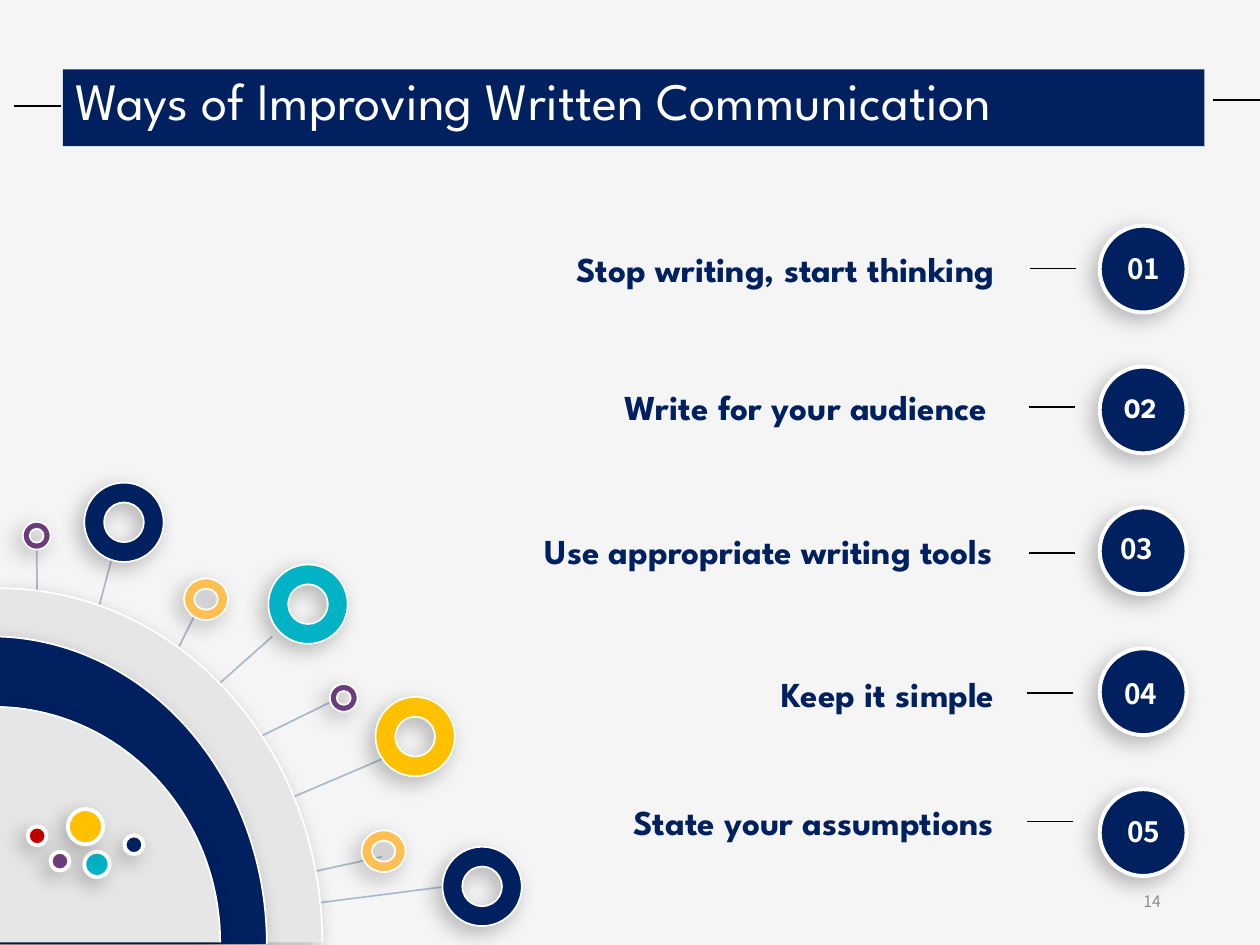
import copy
import math
from dataclasses import dataclass

from lxml import etree
from pptx import Presentation
from pptx import util as u
from pptx.dml.color import RGBColor
from pptx.enum import shapes, text
from pptx.oxml import ns

NAVY, TEAL, GOLD = "002060", "02B3C5", "FFC000"
PURPLE, ORANGE, RED = "6A3C7C", "FFBF53", "C00000"
WHITE, GREY, BLACK = "FFFFFF", "E7E6E6", "000000"
SPOKE, PAGE, PAPER = "ADBACA", "8C8C8C", "F5F5F5"
SPARTAN, NOTO = "League Spartan", "Noto Sans CJK SC"


@dataclass
class Item:
    label: str
    left: float
    top: float
    width: float
    num_left: float
    num_top: float
    dash_right: float
    dash_y: float
    num_font: str = NOTO


@dataclass
class Round:
    left: float
    top: float
    width: float
    height: float
    color: str


ITEMS = [
    Item("Stop writing, start thinking", 9.75, 4.98, 12.17, 22.73, 5.08, 21.69, 5.41),
    Item("Write for your audience", 12.14, 7.77, 8.2, 22.66, 7.87, 21.67, 8.2, SPARTAN),
    Item("Use appropriate writing tools", 10.26, 10.67, 10.49, 22.58, 10.72, 21.67, 11.15),
    Item("Keep it simple", 13.13, 13.56, 9.55, 22.66, 13.64, 21.64, 13.97),
    Item("State your assumptions", 11.91, 16.13, 8.99, 22.73, 16.43, 21.64, 16.56),
]
BADGE_LEFT, BADGE_TOP, BADGE_PITCH, BADGE_SIZE = 22.17, 4.55, 2.84, 1.75

SPOKES = [
    (3.99, 12.27, 0.84, 18.59), (0.74, 10.97, 0.79, 18.59),
    (2.31, 11.05, 0.41, 18.16), (8.92, 17.88, 0.03, 19.02),
    (7.7, 17.27, 0.23, 18.9), (6.63, 14.17, 0.15, 17.35),
    (5.49, 12.83, -0.03, 17.73), (8.08, 15.14, 0.23, 18.49),
]
DOMES = [
    Round(0, 11.86, 6.5, 7.14, GREY),
    Round(-0.18, 12.83, 5.56, 6.2, NAVY),
    Round(-0.13, 14.25, 4.57, 4.75, GREY),
]
RINGS = [
    Round(6.65, 13.79, 0.56, 0.56, PURPLE),
    Round(8.92, 17.07, 1.6, 1.6, NAVY),
    Round(7.57, 14.05, 1.6, 1.6, GOLD),
    Round(7.29, 16.74, 0.89, 0.84, ORANGE),
    Round(5.41, 11.38, 1.6, 1.6, TEAL),
    Round(1.7, 9.73, 1.6, 1.6, NAVY),
    Round(3.71, 11.66, 0.89, 0.84, ORANGE),
    Round(0.46, 10.52, 0.56, 0.56, PURPLE),
]
DOTS = [
    Round(1.7, 17.17, 0.51, 0.51, TEAL),
    Round(0.56, 16.66, 0.38, 0.38, RED),
    Round(1.37, 16.31, 0.71, 0.71, GOLD),
    Round(1.02, 17.17, 0.38, 0.38, PURPLE),
    Round(2.51, 16.84, 0.38, 0.38, NAVY),
]


def rgb(color: str) -> RGBColor:
    return RGBColor.from_string(color)


def paint(sp, color: str, line_pt: float) -> None:
    sp.fill.solid()
    sp.fill.fore_color.rgb = rgb(color)
    sp.line.color.rgb = rgb(WHITE)
    sp.line.width = u.Pt(line_pt)
    sp.shadow.inherit = False
    effects = sp._element.spPr.find(ns.qn("a:effectLst"))
    shadow = etree.SubElement(
        effects, ns.qn("a:outerShdw"), blurRad=str(u.Pt(12)), dist=str(u.Pt(5)),
        dir=str(135 * 60000), algn="tr", rotWithShape="0")
    tint = etree.SubElement(shadow, ns.qn("a:srgbClr"), val=BLACK)
    etree.SubElement(tint, ns.qn("a:alpha"), val="26000")


def add_round(s, kind, item: Round, line_pt: float):
    box = (item.left, item.top, item.width, item.height)
    sp = s.shapes.add_shape(kind, *map(u.Cm, box))
    paint(sp, item.color, line_pt)
    return sp


def add_dome(s, dome: Round, steps: int = 48) -> None:
    bottom = dome.top + dome.height
    angles = [math.pi / 2 * i / steps for i in range(steps + 1)]
    points = [(u.Cm(dome.left + dome.width * math.sin(a)),
               u.Cm(bottom - dome.height * math.cos(a))) for a in angles]
    points.append((u.Cm(dome.left), u.Cm(bottom)))
    builder = s.shapes.build_freeform(*points[0], scale=1.0)
    builder.add_line_segments(points[1:], close=True)
    sp = builder.convert_to_shape()
    paint(sp, dome.color, 1)
    area = sp._element.spPr.find(".//" + ns.qn("a:path"))
    rim = copy.deepcopy(area)
    for segment in rim[-2:]:
        rim.remove(segment)
    rim.set("fill", "none")
    area.set("stroke", "0")
    area.addprevious(rim)


def add_line(s, x1: float, y1: float, x2: float, y2: float, color: str) -> None:
    line = s.shapes.add_connector(
        shapes.MSO_CONNECTOR.STRAIGHT, *map(u.Cm, (x1, y1, x2, y2)))
    line.line.color.rgb = rgb(color)
    line.line.width = u.Pt(1)
    etree.SubElement(line._element.spPr, ns.qn("a:effectLst"))


def write(sp, words: str, font: str, size: float, color: str, bold: bool = False,
          align=text.PP_ALIGN.LEFT, anchor=text.MSO_ANCHOR.TOP, inset: bool = False):
    tf = sp.text_frame
    tf.word_wrap = True
    tf.vertical_anchor = anchor
    if not inset:
        tf.margin_left = tf.margin_right = tf.margin_top = tf.margin_bottom = 0
    tf.text = words
    p = tf.paragraphs[0]
    p.alignment = align
    r = p.runs[0]
    r.font.name, r.font.size, r.font.bold = font, u.Pt(size), bold
    r.font.color.rgb = rgb(color)
    return p


def add_box(s, left: float, top: float, width: float, height: float):
    return s.shapes.add_textbox(*map(u.Cm, (left, top, width, height)))


def add_title(s) -> None:
    sp = s.shapes.add_shape(
        shapes.MSO_SHAPE.RECTANGLE, *map(u.Cm, (1.27, 1.4, 23.01, 1.55)))
    sp.shadow.inherit = False
    sp.fill.solid()
    sp.fill.fore_color.rgb = rgb(NAVY)
    sp.line.fill.background()
    p = write(sp, "Ways of Improving Written Communication", SPARTAN, 30, WHITE, inset=True)
    p.line_spacing = 0.9
    add_line(s, 1.22, 2.13, 0.28, 2.13, BLACK)
    add_line(s, 25.4, 2.01, 24.46, 2.01, BLACK)


def add_item(s, index: int, item: Item) -> None:
    badge = Round(BADGE_LEFT, BADGE_TOP + index * BADGE_PITCH, BADGE_SIZE, BADGE_SIZE, NAVY)
    add_round(s, shapes.MSO_SHAPE.OVAL, badge, 2.25)
    write(add_box(s, item.num_left, item.num_top, 1.27, 0.69),
          f"{index + 1:02d}", item.num_font, 16, WHITE, bold=True)
    write(add_box(s, item.left, item.top, item.width, 0.86),
          item.label, SPARTAN, 20, NAVY, bold=True, align=text.PP_ALIGN.CENTER)
    add_line(s, item.dash_right, item.dash_y, item.dash_right - 0.93, item.dash_y, BLACK)


def main() -> None:
    prs = Presentation()
    prs.slide_width, prs.slide_height = u.Cm(25.4), u.Cm(19.05)
    s = prs.slides.add_slide(prs.slide_layouts[6])
    s.background.fill.solid()
    s.background.fill.fore_color.rgb = rgb(PAPER)

    for spoke in SPOKES:
        add_line(s, *spoke, SPOKE)
    for dome in DOMES:
        add_dome(s, dome)
    for ring in RINGS:
        add_round(s, shapes.MSO_SHAPE.DONUT, ring, 1).adjustments[0] = 0.25
    for dot in DOTS:
        add_round(s, shapes.MSO_SHAPE.OVAL, dot, 2.25)
    add_title(s)
    for index, item in enumerate(ITEMS):
        add_item(s, index, item)
    write(add_box(s, 17.93, 17.65, 5.72, 1.02), "14", NOTO, 9, PAGE,
          align=text.PP_ALIGN.RIGHT, anchor=text.MSO_ANCHOR.MIDDLE, inset=True)
    prs.save("out.pptx")


if __name__ == "__main__":
    main()
